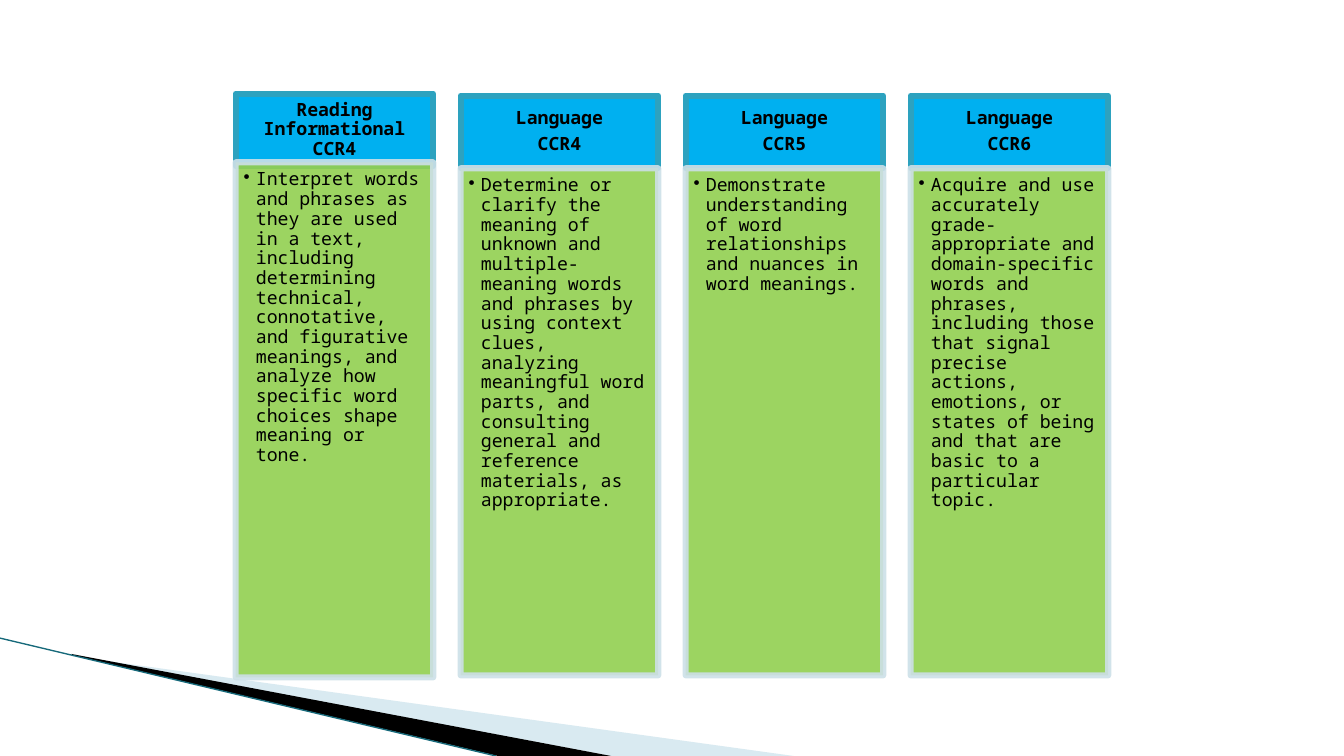
"""Build a slide of four columns describing vocabulary standards."""
from dataclasses import dataclass

from lxml.etree import SubElement
from pptx import Presentation
from pptx.dml.color import RGBColor
from pptx.enum.shapes import MSO_CONNECTOR, MSO_SHAPE
from pptx.enum.text import MSO_ANCHOR, PP_ALIGN
from pptx.oxml.ns import qn
from pptx.shapes.autoshape import Shape
from pptx.slide import Slide
from pptx.text.text import _Paragraph as Paragraph
from pptx.util import Cm, Pt

FONT = "Noto Sans Mono"
COLUMN_LEFT, COLUMN_PITCH, COLUMN_WIDTH = 5.94, 5.67, 4.98
HEADER_HEIGHT = 1.83


@dataclass
class Standard:
    heading: list[str]
    description: str
    header_top: float = 2.41
    body_top: float = 4.24
    body_height: float = 12.78


@dataclass
class Wedge:
    points: list[tuple[float, float]]
    fill: str
    opacity: int = 100


STANDARDS = [
    Standard(
        ["Reading Informational CCR4"],
        "Interpret words and phrases as they are used in a text, including determining "
        "technical, connotative, and figurative meanings, and analyze how specific word "
        "choices shape meaning or tone.",
        header_top=2.36, body_top=4.09, body_height=12.98,
    ),
    Standard(
        ["Language", "CCR4"],
        "Determine or clarify the meaning of unknown and multiple-meaning words and phrases "
        "by using context clues, analyzing meaningful word parts, and consulting general and "
        "reference materials, as appropriate.",
    ),
    Standard(
        ["Language", "CCR5"],
        "Demonstrate understanding of word relationships and nuances in word meanings.",
    ),
    Standard(
        ["Language", "CCR6"],
        "Acquire and use accurately grade-appropriate and domain-specific words and phrases, "
        "including those that signal precise actions, emotions, or states of being and that "
        "are basic to a particular topic.",
    ),
]

WEDGES = [
    Wedge([(1.85, 16.54), (20.0, 19.05), (15.4, 19.05), (1.85, 16.51)], "A0CBDC", 40),
    Wedge([(1.8, 16.48), (15.4, 19.05), (12.55, 19.05), (1.83, 16.51)], "000000"),
]


def color(hex_code: str) -> RGBColor:
    """Turn a hex string into a colour."""
    return RGBColor.from_string(hex_code)


def set_opacity(parent, opacity: int) -> None:
    """Set the opacity, in percent, of the solid fill inside an element."""
    alpha = SubElement(parent.find(qn("a:solidFill"))[0], qn("a:alpha"))
    alpha.set("val", str(opacity * 1000))


def add_panel(slide: Slide, left: float, top: float, height: float,
              fill: str, border: str, opacity: int = 100) -> Shape:
    """Add a bordered rectangle as wide as a column."""
    panel = slide.shapes.add_shape(
        MSO_SHAPE.RECTANGLE, Cm(left), Cm(top), Cm(COLUMN_WIDTH), Cm(height))
    panel.shadow.inherit = False
    panel.fill.solid()
    panel.fill.fore_color.rgb = color(fill)
    panel.line.color.rgb = color(border)
    panel.line.width = Pt(4.33)
    properties = panel.element.spPr
    outline = properties.find(qn("a:ln"))
    if opacity < 100:
        set_opacity(properties, opacity)
        set_opacity(outline, opacity)
    SubElement(outline, qn("a:round"))
    panel.text_frame.word_wrap = True
    return panel


def set_margins(shape: Shape, left: float, top: float, right: float, bottom: float) -> None:
    """Set the text margins of a shape."""
    frame = shape.text_frame
    frame.margin_left, frame.margin_top = Cm(left), Cm(top)
    frame.margin_right, frame.margin_bottom = Cm(right), Cm(bottom)


def write(paragraph: Paragraph, text: str, alignment: PP_ALIGN,
          space_after: float, bold: bool = False) -> None:
    """Write one run of black text into a paragraph."""
    paragraph.alignment = alignment
    paragraph.line_spacing = 0.9
    paragraph.space_after = Pt(space_after)
    run = paragraph.add_run()
    run.text = text
    run.font.name = FONT
    run.font.size = Pt(13)
    run.font.bold = bold
    run.font.color.rgb = color("000000")


def add_bullet(paragraph: Paragraph) -> None:
    """Give a paragraph a hanging round bullet."""
    properties = paragraph._p.get_or_add_pPr()
    properties.set("marL", str(Cm(0.31)))
    properties.set("indent", str(-Cm(0.31)))
    SubElement(properties, qn("a:buChar")).set("char", "•")


def add_standard(slide: Slide, standard: Standard, left: float) -> None:
    """Add the header and body of one column."""
    header = add_panel(slide, left, standard.header_top, HEADER_HEIGHT, "00B0F0", "2DA2BF")
    set_margins(header, 0.25, 0.15, 0.25, 0.15)
    frame = header.text_frame
    frame.vertical_anchor = MSO_ANCHOR.MIDDLE
    for index, line in enumerate(standard.heading):
        paragraph = frame.add_paragraph() if index else frame.paragraphs[0]
        write(paragraph, line, PP_ALIGN.CENTER, 4.5, bold=True)

    body = add_panel(slide, left, standard.body_top, standard.body_height,
                     "92D050", "CDE0E8", 90)
    set_margins(body, 0.2, 0.2, 0.25, 0.28)
    body.text_frame.vertical_anchor = MSO_ANCHOR.TOP
    paragraph = body.text_frame.paragraphs[0]
    add_bullet(paragraph)
    write(paragraph, standard.description, PP_ALIGN.LEFT, 2)


def add_wedge(slide: Slide, wedge: Wedge) -> None:
    """Add one decorative wedge along the bottom edge."""
    start, *others = [(Cm(x), Cm(y)) for x, y in wedge.points]
    builder = slide.shapes.build_freeform(*start)
    builder.add_line_segments(others)
    shape = builder.convert_to_shape()
    shape.shadow.inherit = False
    shape.fill.solid()
    shape.fill.fore_color.rgb = color(wedge.fill)
    shape.line.fill.background()
    if wedge.opacity < 100:
        set_opacity(shape.element.spPr, wedge.opacity)


def add_edge_line(slide: Slide) -> None:
    """Add the thin line below the wedges."""
    line = slide.shapes.add_connector(
        MSO_CONNECTOR.STRAIGHT, Cm(0), Cm(16.08), Cm(12.5), Cm(19.05))
    line.line.color.rgb = color("16697A")
    line.line.width = Pt(0.95)
    SubElement(line._element.spPr, qn("a:effectLst"))


def main() -> None:
    """Build and save the presentation."""
    presentation = Presentation()
    presentation.slide_width, presentation.slide_height = Cm(33.87), Cm(19.05)
    slide = presentation.slides.add_slide(presentation.slide_layouts[6])
    for wedge in WEDGES:
        add_wedge(slide, wedge)
    add_edge_line(slide)
    for index, standard in enumerate(STANDARDS):
        add_standard(slide, standard, COLUMN_LEFT + index * COLUMN_PITCH)
    presentation.save("out.pptx")


if __name__ == "__main__":
    main()
